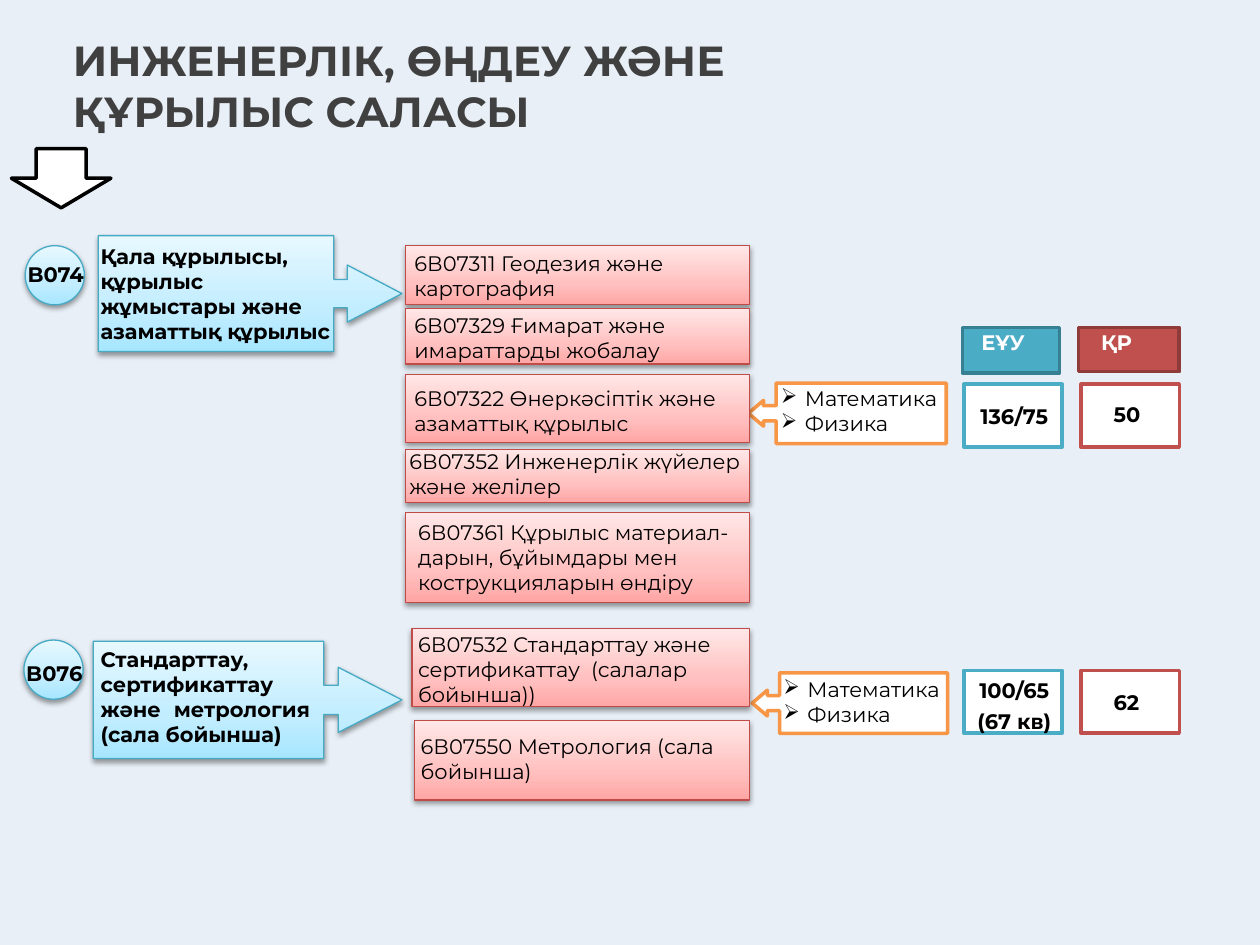
import copy

import pptx
import pptx.dml.color
import pptx.enum.shapes
import pptx.enum.text
import pptx.oxml
import pptx.oxml.ns
import pptx.util
from pptx.util import Inches

KIND = pptx.enum.shapes.MSO_SHAPE
ALIGN = pptx.enum.text.PP_ALIGN
qn = pptx.oxml.ns.qn


class Theme:
    font = "Montserrat"
    head, body = 24, 12
    thin, bold = 0.75, 2
    dark, black, white = "404040", "000000", "FFFFFF"
    back, orange = "DCE6F2", "F79646"
    teal, red = "4BACC6", "C0504D"
    tealedge, rededge = "377F92", "8E3B39"
    # line colour, then gradient stops from bottom to top
    blue = ("46AAC5", ((0, "A7E6FF"), (0.35, "C1EDFF"), (1, "E7F8FF")))
    pink = ("BF4C48", ((0, "FFA6A5"), (0.35, "FFC0BF"), (1, "FFE7E7")))


def rgb(code):
    return pptx.dml.color.RGBColor.from_string(code)


def node(parent, tag, **attrs):
    """Append a DrawingML child element."""
    child = pptx.oxml.parse_xml(f"<a:{tag} {pptx.oxml.ns.nsdecls('a')}/>")
    for name, value in attrs.items():
        child.set(name, str(value))
    parent.append(child)
    return child


class Page:
    def __init__(self, slide, theme):
        self.slide, self.theme = slide, theme

    def shape(self, kind, box, adj=()):
        item = self.slide.shapes.add_shape(kind, *map(Inches, box))
        item.shadow.inherit = False
        for i, value in enumerate(adj):
            item.adjustments[i] = value
        return item

    def wash(self, box, color, alpha):
        """Draw a see-through panel without an outline."""
        item = self.shape(KIND.RECTANGLE, box)
        item.fill.solid()
        item.fill.fore_color.rgb = rgb(color)
        item.line.fill.background()
        tint = item._element.spPr.find(".//" + qn("a:srgbClr"))
        node(tint, "alpha", val=alpha * 1000)

    def flat(self, kind, box, line, fill=Theme.white, adj=()):
        item = self.shape(kind, box, adj)
        item.fill.solid()
        item.fill.fore_color.rgb = rgb(fill)
        item.line.color.rgb = rgb(line)
        item.line.width = pptx.util.Pt(self.theme.bold)

    def glow(self, kind, box, look, adj=()):
        """Draw a shape with a gradient and a soft shadow."""
        line, stops = look
        item = self.shape(kind, box, adj)
        item.line.color.rgb = rgb(line)
        item.line.width = pptx.util.Pt(self.theme.thin)
        item.fill.gradient()
        item.fill.gradient_angle = 90
        props = item._element.spPr
        ramp = props.find(".//" + qn("a:gsLst"))
        ramp.append(copy.deepcopy(ramp[0]))
        for stop, (pos, color) in zip(item.fill.gradient_stops, stops):
            stop.position = pos
            stop.color.rgb = rgb(color)
        shade = node(props.find(qn("a:effectLst")), "outerShdw",
                     blurRad=pptx.util.Pt(3.1), dist=pptx.util.Pt(1.6),
                     dir=90 * 60000, rotWithShape=0)
        tint = node(shade, "srgbClr", val=self.theme.black)
        node(tint, "alpha", val=38000)

    def text(self, box, lines, bold=False, color=Theme.black,
             size=Theme.body, align=None, bullet=None, loose=False):
        frame = self.slide.shapes.add_textbox(*map(Inches, box)).text_frame
        frame.word_wrap = True
        frame.text = "\n".join(lines)
        for para in frame.paragraphs:
            font = para.font
            font.name, font.size = self.theme.font, pptx.util.Pt(size)
            font.bold, font.color.rgb = bold, rgb(color)
            para.alignment = align
            if loose:
                para.line_spacing = 1.15
                para.space_after = pptx.util.Pt(1)
            if bullet:
                props = para._p.get_or_add_pPr()
                props.set("marL", str(Inches(0.19)))
                props.set("indent", str(-Inches(0.19)))
                mark = node(props, "buChar", char=bullet)
                props.insert(0, mark)
        return frame


def draw(page):
    look = page.theme
    page.wash((0, 0, 10, 7.5), look.back, 63)
    title = page.text((0.48, 0.2, 9.5, 0.95),
                      ["ИНЖЕНЕРЛІК, ӨҢДЕУ ЖӘНЕ", "ҚҰРЫЛЫС САЛАСЫ"],
                      True, look.dark, look.head)
    title.vertical_anchor = pptx.enum.text.MSO_ANCHOR.MIDDLE
    page.flat(KIND.DOWN_ARROW, (0.09, 1.18, 0.79, 0.47), look.black)

    # code, circle place, code place, callout, its shape, text place, lines
    groups = (
        ("B074", (0.2, 1.95), (0.12, 2.03),
         (0.78, 1.87, 2.41, 0.92), (0.244, 0.246, 0.471, 0.776),
         (0.7, 1.88, 2.17, 0.91), None,
         ["Қала құрылысы,", "құрылыс", "жұмыстары және",
          "азаматтық құрылыс"]),
        ("B076", (0.19, 5.08), (0.11, 5.19),
         (0.74, 5.09, 2.45, 0.93), (0.25, 0.278, 0.544, 0.747),
         (0.7, 5.08, 1.86, 0.91), ALIGN.JUSTIFY,
         ["Стандарттау,", "сертификаттау",
          "және метрология (сала бойынша)"]),
    )
    for code, disc, spot, call, adj, area, align, lines in groups:
        page.glow(KIND.RIGHT_ARROW_CALLOUT, call, look.blue, adj)
        page.text(area, lines, True, align=align)
        page.glow(KIND.OVAL, (*disc, 0.47, 0.47), look.blue)
        page.text((*spot, 0.71, 0.3), [code], True)

    # subject callouts: callout box, text place
    for call, spot in (((5.94, 3.04, 1.57, 0.48), (6.1, 3.01)),
                       ((5.97, 5.34, 1.55, 0.48), (6.12, 5.32))):
        page.flat(KIND.LEFT_ARROW_CALLOUT, call, look.orange,
                  adj=(0.25, 0.213, 0.25, 0.86))
        page.text((*spot, 2.17, 0.5), ["Математика", "Физика"], bullet="➢")

    # programmes: left, top, height, then text place and lines
    right = 5.95
    courses = (
        (3.22, 1.95, 0.47, (3.19, 1.94, 3.62, 0.5),
         ["6В07311 Геодезия және", "картография"]),
        (3.22, 2.45, 0.44, (3.19, 2.43, 3.23, 0.5),
         ["6В07329 Ғимарат және", "имараттарды жобалау"]),
        (3.22, 2.97, 0.54, (3.19, 3.01, 2.99, 0.5),
         ["6В07322 Өнеркәсіптік және", "азаматтық құрылыс"]),
        (3.22, 3.57, 0.42, (3.15, 3.51, 2.95, 0.5),
         ["6В07352 Инженерлік жүйелер және желілер"]),
        (3.22, 4.07, 0.71, (3.22, 4.07, 2.75, 0.71),
         ["6В07361 Құрылыс материал-дарын, бұйымдары мен",
          "кострукцияларын өндіру"]),
        (3.27, 4.99, 0.62, (3.22, 4.96, 2.74, 0.71),
         ["6В07532 Стандарттау және", "сертификаттау  (салалар",
          "бойынша))"]),
        (3.29, 5.72, 0.63, (3.24, 5.77, 2.73, 0.5),
         ["6В07550 Метрология (сала бойынша)"]),
    )
    for left, top, high, area, lines in courses:
        page.glow(KIND.RECTANGLE, (left, top, right - left, high), look.pink)
        page.text(area, lines)

    # scores: row top, first text top, first lines, second text top, value
    scores = ((3.05, 3.12, ["136/75"], 3.14, "50"),
              (5.32, 5.3, ["100/65", "(67 кв)"], 5.42, "62"))
    for top, high, lines, low, value in scores:
        for left, line in ((7.65, look.teal), (8.58, look.red)):
            page.flat(KIND.RECTANGLE, (left, top, 0.78, 0.5), line)
        page.text((7.6, high, 0.9, 0.31 * len(lines)), lines, True,
                  align=ALIGN.CENTER, loose=True)
        page.text((8.74, low, 0.79, 0.3), [value], True)

    heads = (("ЕҰУ", (7.64, 2.6, 0.77, 0.36), 7.69, look.teal, look.tealedge),
             ("ҚР", (8.56, 2.6, 0.8, 0.35), 8.64, look.red, look.rededge))
    for label, box, left, fill, line in heads:
        page.flat(KIND.RECTANGLE, box, line, fill)
        page.text((left, 2.57, 0.77, 0.3), [label], True, look.white)


def main():
    deck = pptx.Presentation()
    deck.slide_width, deck.slide_height = Inches(10), Inches(7.5)
    draw(Page(deck.slides.add_slide(deck.slide_layouts[6]), Theme))
    deck.save("out.pptx")


if __name__ == "__main__":
    main()
